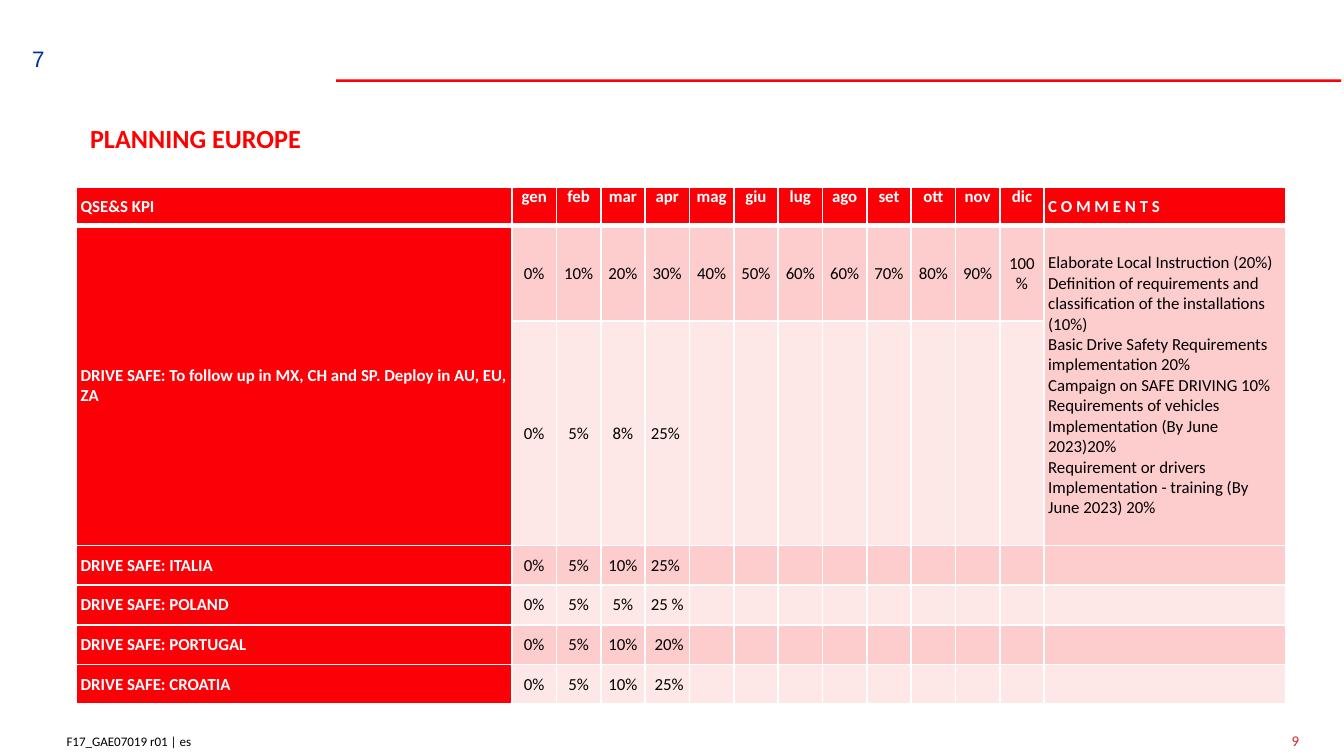
"""Build the Planning Europe slide with its monthly KPI table."""
from dataclasses import dataclass

from lxml import etree
from pptx import Presentation
from pptx import util as u
from pptx.dml.color import RGBColor
from pptx.enum import shapes, text
from pptx.oxml import ns


@dataclass(frozen=True)
class Theme:
    red: str = "FB0007"
    title: str = "FF0000"
    page: str = "DA2424"
    blue: str = "003399"
    odd: str = "FDCCCC"
    even: str = "FEE7E7"
    white: str = "FFFFFF"
    black: str = "000000"
    font: str = "Calibri"
    small: int = 7
    note: int = 8
    cell: int = 9
    num: int = 12
    head: int = 14


@dataclass(frozen=True)
class Row:
    name: str
    height: float
    vals: str = ""
    note: str = ""


T = Theme()
LEFT, MID = text.PP_ALIGN.LEFT, text.PP_ALIGN.CENTER
RIGHT = text.PP_ALIGN.RIGHT
MONTHS = "gen,feb,mar,apr,mag,giu,lug,ago,set,ott,nov,dic"
NOTE = """Elaborate Local Instruction (20%)
Definition of requirements and classification of the installations (10%)
Basic Drive Safety Requirements implementation 20%
Campaign on SAFE DRIVING 10% 
Requirements of vehicles Implementation (By June 2023)20%
Requirement or drivers Implementation - training (By June 2023) 20%"""
TALL = 3.85
TOPS = (0.29, 0.71, 1.67)
LOW = (TALL - sum(TOPS)) / 4
ROWS = [
    Row("QSE&S KPI", TOPS[0], MONTHS, "C O M M E N T S"),
    Row("DRIVE SAFE: To follow up in MX, CH and SP. Deploy in AU, EU, ZA", TOPS[1],
        "0%,10%,20%,30%,40%,50%,60%,60%,70%,80%,90%,100%", NOTE),
    Row("", TOPS[2], "0%,5%,8%,25% "),
    Row("DRIVE SAFE: ITALIA", LOW, "0%,5%,10%,25% "),
    Row("DRIVE SAFE: POLAND", LOW, "0%,5%,5%,25 %"),
    Row("DRIVE SAFE: PORTUGAL", LOW, "0%,5%,10%, 20%"),
    Row("DRIVE SAFE: CROATIA", LOW, "0%,5%,10%, 25%"),
]
WIDTHS = [3.24] + [0.33] * 12 + [1.8]


def write(frame, words: str, *, size: int, color: str, font: str = T.font,
          bold: bool = False, align=LEFT) -> None:
    """Put words in the frame's first paragraph and format them."""
    para = frame.paragraphs[0]
    para.text = words.replace("\n", "\v")
    para.alignment = align
    for run in para.runs:
        run.font.size, run.font.name, run.font.bold = u.Pt(size), font, bold
        run.font.color.rgb = RGBColor.from_string(color)
    for gap in para._p.findall(ns.qn("a:br")):
        etree.SubElement(gap, ns.qn("a:rPr"), sz=str(size * 100))
    if not words:
        etree.SubElement(para._p, ns.qn("a:endParaRPr"), sz=str(size * 100))


def place(shape, left: float, top: float, width: float, height: float) -> None:
    """Move and size a shape."""
    shape.left, shape.top = u.Inches(left), u.Inches(top)
    shape.width, shape.height = u.Inches(width), u.Inches(height)


def label(slide, words: str, at: tuple, inset: float | None = None, **style) -> None:
    """Add a wrapped text box."""
    box = slide.shapes.add_textbox(*map(u.Inches, at))
    frame = box.text_frame
    frame.word_wrap = True
    if inset is not None:
        frame.margin_left = frame.margin_right = u.Inches(inset)
        frame.margin_top = frame.margin_bottom = u.Inches(inset)
    write(frame, words, **style)


def edge(cell, base: int) -> None:
    """Draw white cell borders with the given bottom width."""
    props = cell._tc.get_or_add_tcPr()
    for side, width in dict(L=1, R=1, T=1, B=base).items():
        line = etree.SubElement(props, ns.qn(f"a:ln{side}"), w=str(u.Pt(width)))
        fill = etree.SubElement(line, ns.qn("a:solidFill"))
        etree.SubElement(fill, ns.qn("a:srgbClr"), val=T.white)


def grid(slide) -> None:
    """Add the KPI table."""
    at = map(u.Inches, (0.57, 1.39, sum(WIDTHS), TALL))
    table = slide.shapes.add_table(len(ROWS), len(WIDTHS), *at).table
    for col, width in zip(table.columns, WIDTHS):
        col.width = u.Inches(width)
    last = len(WIDTHS) - 1
    for y, row in enumerate(ROWS):
        table.rows[y].height = u.Inches(row.height)
        vals = row.vals.split(",")
        vals += [""] * (last - 1 - len(vals))
        for x, words in enumerate([row.name, *vals, row.note]):
            cell, top, month = table.cell(y, x), y == 0, 0 < x < last
            strong = top or x == 0
            edge(cell, 3 if top else 1)
            cell.fill.solid()
            shade = T.red if strong else T.odd if y % 2 else T.even
            cell.fill.fore_color.rgb = RGBColor.from_string(shade)
            cell.margin_left = cell.margin_right = u.Inches(0.03)
            cell.margin_top = cell.margin_bottom = 0
            cell.vertical_anchor = (text.MSO_ANCHOR.TOP if top and month
                                    else text.MSO_ANCHOR.MIDDLE)
            write(cell.text_frame, words, size=T.cell, bold=strong,
                  color=T.white if strong else T.black,
                  align=MID if month else LEFT)
    for x in (0, last):
        table.cell(1, x).merge(table.cell(2, x))


def main() -> None:
    """Build and save the slide."""
    deck = Presentation()
    deck.slide_width = u.Inches(10)
    deck.slide_height = u.Inches(10 * 9 / 16)
    slide = deck.slides.add_slide(deck.slide_layouts[5])
    label(slide, "F17_GAE07019 r01 | es", (0, 5.41, 1.52, 0.22),
          size=T.small, color=T.black, align=RIGHT)
    rule = slide.shapes.add_shape(shapes.MSO_SHAPE.RECTANGLE, 0, 0, 0, 0)
    place(rule, 2.5, 0.59, 7.48, 0.02)
    rule.shadow.inherit = False
    rule.fill.solid()
    rule.fill.fore_color.rgb = RGBColor.from_string(T.red)
    rule.line.fill.background()
    label(slide, "9", (9.57, 5.4, 1.02, 0.22), 0.04, size=T.note, color=T.page)
    title = slide.shapes.title
    place(title, 0.57, 0.86, 7.24, 0.34)
    title.text_frame.auto_size = text.MSO_AUTO_SIZE.NONE
    title.text_frame.vertical_anchor = text.MSO_ANCHOR.TOP
    write(title.text_frame, "PLANNING EUROPE", size=T.head, color=T.title, bold=True)
    grid(slide)
    label(slide, "7", (0.08, 0.29, 0.35, 0.3), size=T.num, color=T.blue,
          font="Arial", align=RIGHT)
    deck.save("out.pptx")


if __name__ == "__main__":
    main()
